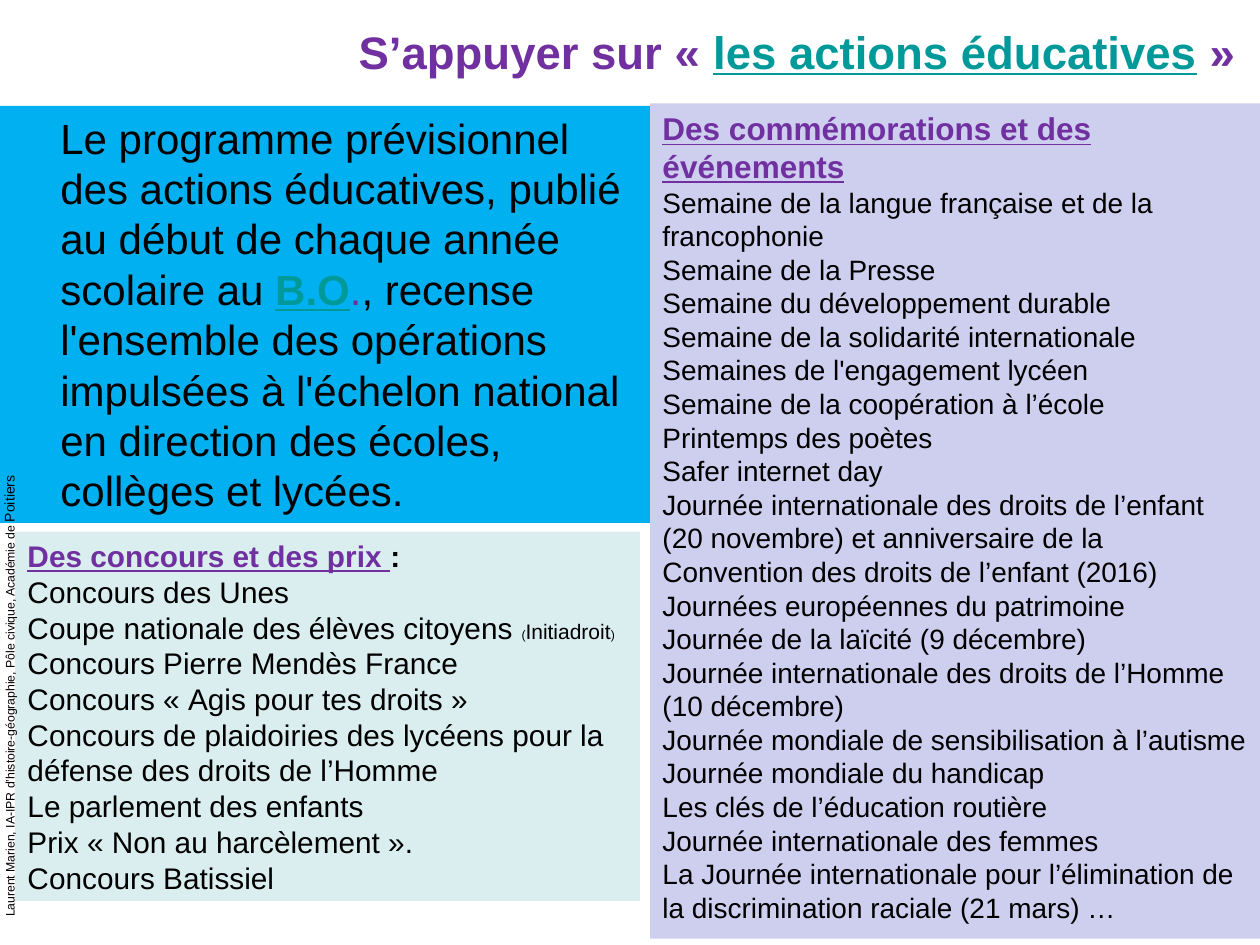
import pptx
import pptx.util
import pptx.dml.color
import pptx.enum.shapes
import pptx.enum.text

PURPLE = "7030A0"
TEAL = "009999"
BLACK = "000000"
ALIGN = pptx.enum.text.PP_ALIGN
ANCHOR = pptx.enum.text.MSO_ANCHOR

PRIZES = [
    "Concours Pierre Mendès France",
    "Concours «\u00a0Agis pour tes droits\u00a0»",
    "Concours de plaidoiries des lycéens pour la défense des droits de l’Homme",
    "Le parlement des enfants",
    "Prix «\u00a0Non au harcèlement\u00a0».",
    "Concours Batissiel",
]
EVENTS = [
    "Semaine de la langue française et de la francophonie",
    "Semaine de la Presse",
    "Semaine du développement durable",
    "Semaine de la solidarité internationale",
    "Semaines de l'engagement lycéen",
    "Semaine de la coopération à l’école",
    "Printemps des poètes",
    "Safer internet day",
    "Journée internationale des droits de l’enfant (20 novembre) et "
    "anniversaire de la Convention des droits de l’enfant (2016)",
    "Journées européennes du patrimoine",
    "Journée de la laïcité (9 décembre)",
    "Journée internationale des droits de l’Homme (10 décembre)",
    "Journée mondiale de sensibilisation à l’autisme",
    "Journée mondiale du handicap",
    "Les clés de l’éducation routière",
    "Journée internationale des femmes",
    "La Journée internationale pour l’élimination de la discrimination "
    "raciale (21 mars) …",
]


def paint(code):
    return pptx.dml.color.RGBColor.from_string(code)


class Page:
    font = "Arial"

    def __init__(self, deck):
        self.slide = deck.slides.add_slide(deck.slide_layouts[6])

    def place(self, box):
        return [pptx.util.Inches(n) for n in box]

    def panel(self, box, fill, left=0.1):
        shape = self.slide.shapes.add_shape(
            pptx.enum.shapes.MSO_SHAPE.RECTANGLE, *self.place(box))
        shape.shadow.inherit = False
        shape.fill.solid()
        shape.fill.fore_color.rgb = paint(fill)
        shape.line.fill.background()
        return self.frame(shape, ANCHOR.TOP, left)

    def label(self, box, anchor=ANCHOR.TOP, turn=0):
        shape = self.slide.shapes.add_textbox(*self.place(box))
        shape.rotation = turn
        return self.frame(shape, anchor)

    def frame(self, shape, anchor, left=0.1):
        frame = shape.text_frame
        frame.word_wrap = True
        frame.vertical_anchor = anchor
        frame.margin_left = pptx.util.Inches(left)
        return frame

    def entry(self, frame, parts, size, color=BLACK, bold=False,
              line=False, align=ALIGN.LEFT):
        para = frame.paragraphs[0]
        if para.runs:
            para = frame.add_paragraph()
        para.alignment = align
        self.style(para.font, size, color, bold, line)
        para.font.name = self.font
        for part in [parts] if isinstance(parts, str) else parts:
            text, look = (part, {}) if isinstance(part, str) else part
            run = para.add_run()
            run.text = text
            self.style(run.font, **look)

    def style(self, font, size=None, color=None, bold=None, line=None):
        if size:
            font.size = pptx.util.Pt(size)
        if color:
            font.color.rgb = paint(color)
        if bold is not None:
            font.bold = bold
        if line is not None:
            font.underline = line


def main():
    deck = pptx.Presentation()
    deck.slide_width = pptx.util.Inches(10)
    deck.slide_height = pptx.util.Inches(7.5)
    page = Page(deck)

    title = page.label((0.9, 0.21, 9, 0.39), ANCHOR.MIDDLE)
    page.entry(title, [
        "S’appuyer sur «\u00a0",
        ("les actions éducatives", {"color": TEAL, "line": True}),
        "\u00a0»",
    ], 26, PURPLE, bold=True, align=ALIGN.RIGHT)

    intro = page.panel((0, 0.84, 5.16, 3.31), "00B0F0", left=0.48)
    page.entry(intro, [
        "Le programme prévisionnel des actions éducatives, publié au début "
        "de chaque année scolaire au ",
        ("B.O", {"color": TEAL, "bold": True, "line": True}),
        (".", {"color": PURPLE}),
        ", recense l'ensemble des opérations impulsées à l'échelon national "
        "en direction des écoles, collèges et lycées.",
    ], 24)

    events = page.panel((5.16, 0.82, 4.84, 6.63), "CECEEF")
    page.entry(events, "Des commémorations et des événements", 18, PURPLE,
               bold=True, line=True)
    for event in EVENTS:
        page.entry(events, event, 16)

    prizes = page.panel((0.12, 4.22, 4.96, 2.93), "DAEDEF")
    page.entry(prizes, [
        ("Des concours et des prix ", {"color": PURPLE, "line": True}),
        ":",
    ], 17, bold=True)
    page.entry(prizes, "Concours des Unes", 17)
    page.entry(prizes, [
        "Coupe nationale des élèves citoyens ",
        ("(", {"size": 7}),
        ("Initiadroit", {"size": 12}),
        (")", {"size": 7}),
    ], 17)
    for prize in PRIZES:
        page.entry(prizes, prize, 17)

    credit = page.label((-2.68, 4.5, 5.51, 0.24), turn=270)
    page.entry(credit, [
        "Laurent Marien, IA-IPR d’histoire-géographie, Pôle civique, "
        "Académie de ",
        ("Poitiers", {"size": 8}),
    ], 7)

    deck.save("out.pptx")


if __name__ == "__main__":
    main()
